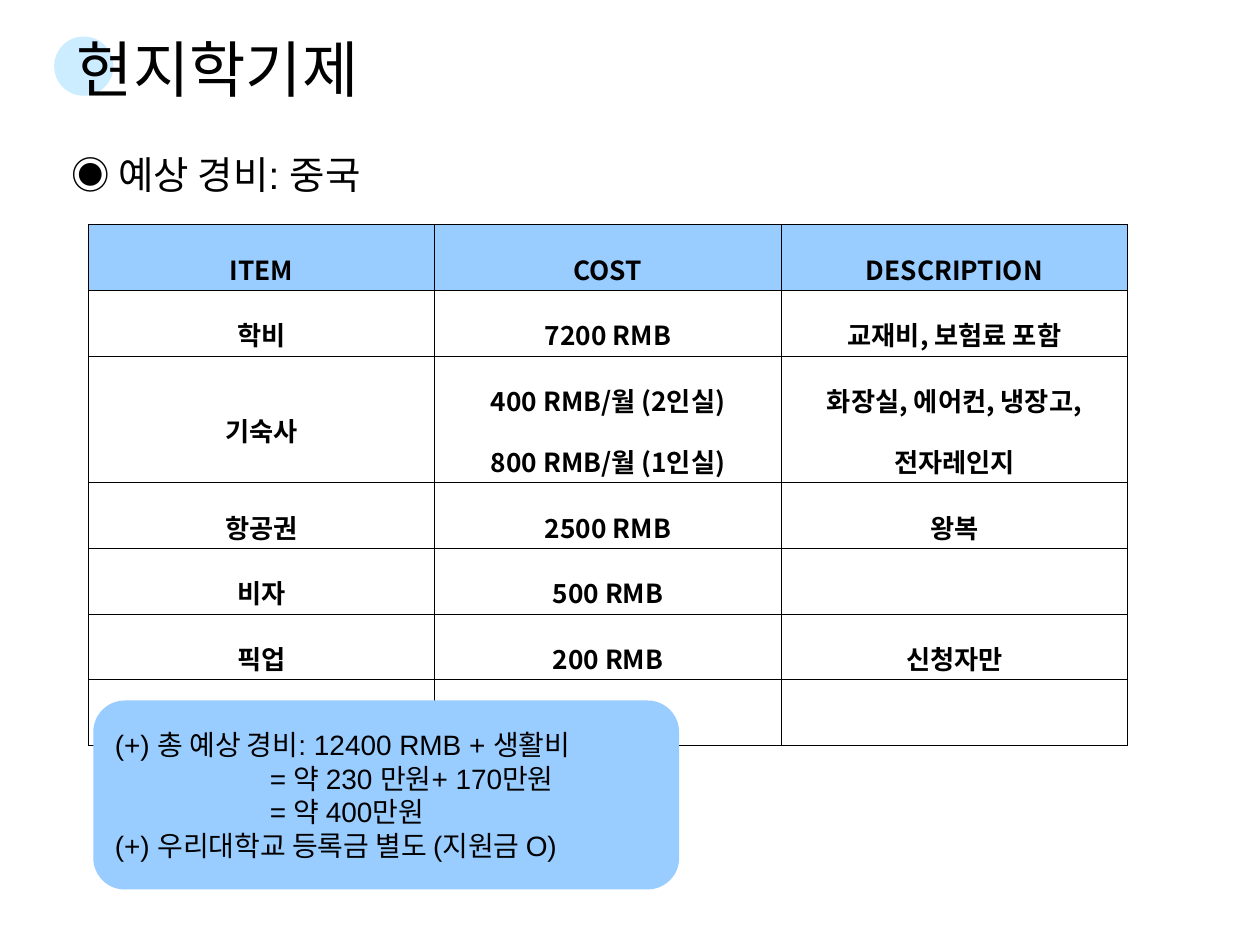
from lxml import etree
from pptx import Presentation
from pptx.dml.color import RGBColor
from pptx.enum.shapes import MSO_SHAPE
from pptx.enum.text import MSO_ANCHOR, MSO_AUTO_SIZE, PP_ALIGN
from pptx.oxml.ns import qn
from pptx.util import Inches, Pt

BLACK = RGBColor(0x00, 0x00, 0x00)
WHITE = RGBColor(0xFF, 0xFF, 0xFF)
SKY = RGBColor(0x99, 0xCC, 0xFF)
PALE_SKY = RGBColor(0xCC, 0xEC, 0xFF)
LATIN_FONT = "Arial"
KOREAN_FONT = "Noto Sans CJK KR"
LEFT, CENTER, JUSTIFY = PP_ALIGN.LEFT, PP_ALIGN.CENTER, PP_ALIGN.JUSTIFY
TOP, MIDDLE, BOTTOM = MSO_ANCHOR.TOP, MSO_ANCHOR.MIDDLE, MSO_ANCHOR.BOTTOM
NO_AUTOSIZE = MSO_AUTO_SIZE.NONE
ELLIPSE, ROUNDED = MSO_SHAPE.OVAL, MSO_SHAPE.ROUNDED_RECTANGLE
TITLE_ONLY = 5

EXPENSES = [
    ("ITEM", "COST", "DESCRIPTION"),
    ("학비", "7200 RMB", "교재비, 보험료 포함"),
    ("기숙사", "400 RMB/월 (2인실)\n800 RMB/월 (1인실)", "화장실, 에어컨, 냉장고,\n전자레인지"),
    ("항공권", "2500 RMB", "왕복"),
    ("비자", "500 RMB", ""),
    ("픽업", "200 RMB", "신청자만"),
    ("", "", ""),
]
TOTALS = """(+) 총 예상 경비: 12400 RMB + 생활비
= 약 230 만원+ 170만원
= 약 400만원
(+) 우리대학교 등록금 별도 (지원금 O)"""


def write_text(frame, text, size, font=LATIN_FONT, bold=False, align=LEFT, spacing=1.0):
    for index, line in enumerate(text.split("\n")):
        para = frame.add_paragraph() if index else frame.paragraphs[0]
        para.alignment = align
        para.line_spacing = spacing
        span = para.add_run()
        span.text = line
        span.font.size = Pt(size)
        span.font.name = font
        span.font.bold = bold
        span.font.color.rgb = BLACK
        east_asian = etree.Element(qn("a:ea"), typeface=KOREAN_FONT)
        span.font._element.find(qn("a:latin")).addnext(east_asian)


def set_frame(frame, anchor):
    frame.word_wrap = True
    frame.auto_size = NO_AUTOSIZE
    frame.vertical_anchor = anchor
    frame.margin_left = frame.margin_right = frame.margin_bottom = Inches(0.1)
    frame.margin_top = Inches(0.05)


def add_filled_shape(page, kind, left, top, width, height, color):
    shape = page.shapes.add_shape(kind, Inches(left), Inches(top), Inches(width), Inches(height))
    shape.shadow.inherit = False
    shape.fill.solid()
    shape.fill.fore_color.rgb = color
    shape.line.fill.background()
    return shape


def add_title(page):
    title = page.shapes.title
    title.left, title.top = Inches(0.51), Inches(0.39)
    title.width, title.height = Inches(3.15), Inches(0.54)
    set_frame(title.text_frame, BOTTOM)
    write_text(title.text_frame, "현지학기제", 35, font=KOREAN_FONT)
    accent = add_filled_shape(page, ELLIPSE, 0.43, 0.29, 0.47, 0.47, PALE_SKY)
    title._element.addprevious(accent._element)


def add_subtitle(page):
    box = page.shapes.add_textbox(Inches(0.47), Inches(1.15), Inches(3.27), Inches(0.55))
    set_frame(box.text_frame, TOP)
    write_text(box.text_frame, "◉ 예상 경비: 중국", 22)


def add_borders(cell):
    properties = cell._tc.get_or_add_tcPr()
    for index, side in enumerate(("lnL", "lnR", "lnT", "lnB")):
        line = etree.Element(qn(f"a:{side}"), w=str(Pt(0.28)))
        fill = etree.SubElement(line, qn("a:solidFill"))
        etree.SubElement(fill, qn("a:srgbClr"), val=str(BLACK))
        properties.insert(index, line)


def row_height(values):
    if not any(values):
        return Inches(0.52)
    return Inches(0.87 if any("\n" in value for value in values) else 0.46)


def add_expense_table(page):
    frame = page.shapes.add_table(
        len(EXPENSES), len(EXPENSES[0]), Inches(0.7), Inches(1.78), Inches(8.24), Inches(3.62)
    )
    table = frame.table
    for column in table.columns:
        column.width = Inches(2.75)
    for row_index, values in enumerate(EXPENSES):
        table.rows[row_index].height = row_height(values)
        for column_index, value in enumerate(values):
            cell = table.cell(row_index, column_index)
            cell.vertical_anchor = MIDDLE
            cell.margin_left = cell.margin_right = Inches(0.07)
            cell.margin_top = cell.margin_bottom = Inches(0.02)
            cell.fill.solid()
            cell.fill.fore_color.rgb = WHITE if row_index else SKY
            add_borders(cell)
            if value:
                write_text(cell.text_frame, value, 15, font=KOREAN_FONT,
                           bold=True, align=CENTER, spacing=1.6)


def add_totals(page):
    box = add_filled_shape(page, ROUNDED, 0.74, 5.56, 4.65, 1.5, SKY)
    frame = box.text_frame
    frame.word_wrap = True
    frame.vertical_anchor = MIDDLE
    write_text(frame, TOTALS, 16, align=JUSTIFY)
    for para in frame.paragraphs:
        if para.text.startswith("="):
            para._p.get_or_add_pPr().set("marL", str(Inches(1.23)))


def main():
    deck = Presentation()
    deck.slide_width, deck.slide_height = Inches(10), Inches(7.5)
    page = deck.slides.add_slide(deck.slide_layouts[TITLE_ONLY])
    add_title(page)
    add_subtitle(page)
    add_expense_table(page)
    add_totals(page)
    deck.save("out.pptx")


if __name__ == "__main__":
    main()
